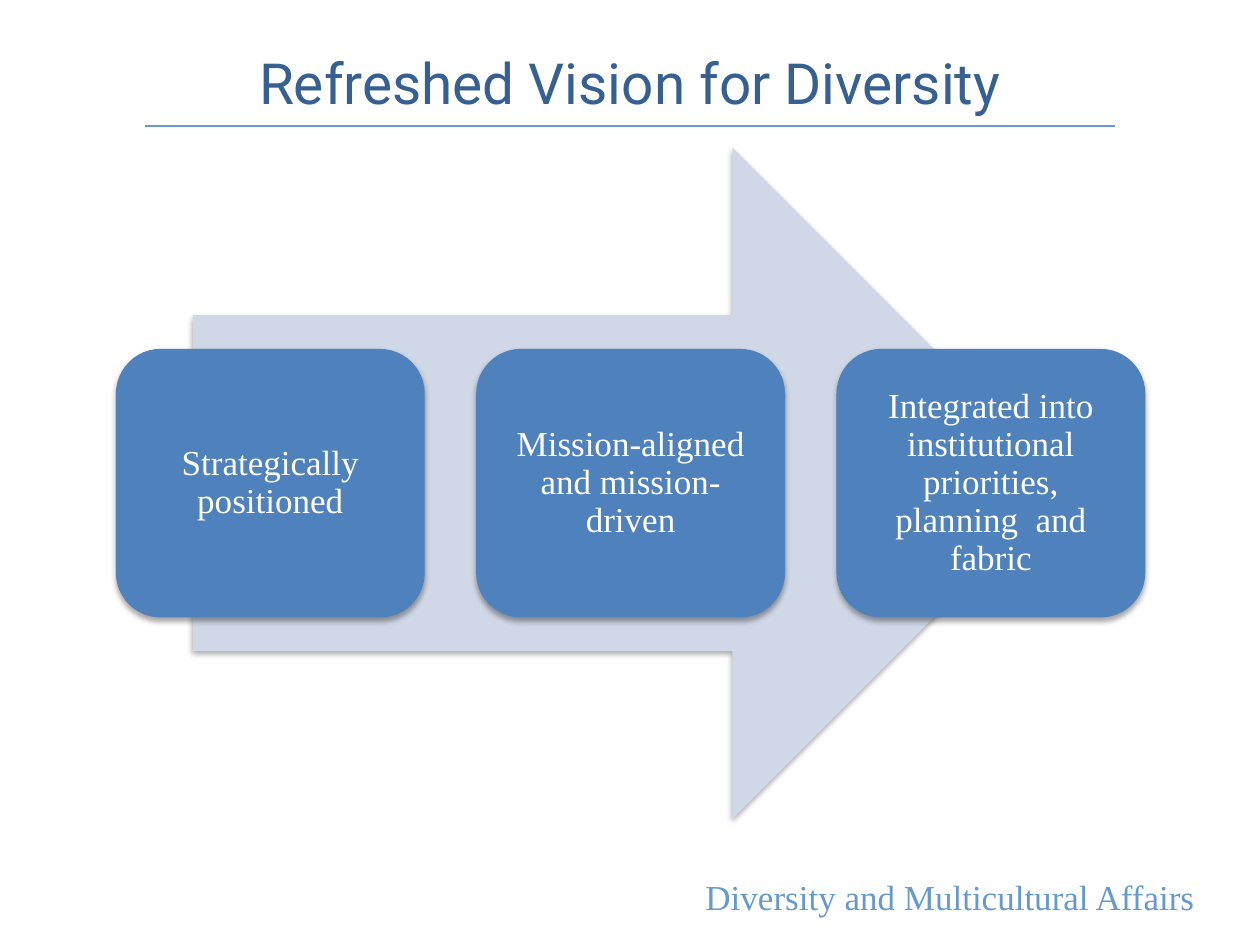
from lxml.etree import SubElement
from pptx import Presentation
from pptx.dml.color import RGBColor
from pptx.enum.shapes import MSO_CONNECTOR, MSO_SHAPE
from pptx.enum.text import MSO_ANCHOR, PP_ALIGN
from pptx.oxml.ns import qn
from pptx.util import Inches, Pt

TITLE_BLUE = RGBColor(0x37, 0x60, 0x92)
ACCENT_BLUE = RGBColor(0x66, 0x99, 0xCC)
ARROW_BLUE = RGBColor(0xD0, 0xD8, 0xE8)
CARD_BLUE = RGBColor(0x4F, 0x81, 0xBD)
WHITE = RGBColor(0xFF, 0xFF, 0xFF)
SERIF = "Times New Roman"
VISION_STEPS = [
    "Strategically positioned",
    "Mission-aligned and mission-driven",
    "Integrated into institutional priorities, planning  and fabric",
]


def write_text(shape, text, font_name, size, color, alignment):
    """Fill a shape with one styled, wrapped paragraph and return it."""
    frame = shape.text_frame
    frame.word_wrap = True
    paragraph = frame.paragraphs[0]
    paragraph.text = text
    paragraph.alignment = alignment
    paragraph.font.name = font_name
    paragraph.font.size = Pt(size)
    paragraph.font.color.rgb = color
    return paragraph


def add_soft_shape(slide, kind, left, top, width, height, color):
    """Add a borderless filled shape with a soft shadow below it."""
    shape = slide.shapes.add_shape(
        kind, Inches(left), Inches(top), Inches(width), Inches(height))
    shape.fill.solid()
    shape.fill.fore_color.rgb = color
    shape.line.fill.background()
    shape.shadow.inherit = False
    effects = shape._element.spPr.find(qn("a:effectLst"))
    shadow = SubElement(effects, qn("a:outerShdw"), blurRad=str(Pt(3.1)),
                        dist=str(Pt(1.8)), dir="5400000", rotWithShape="0")
    shadow_color = SubElement(shadow, qn("a:srgbClr"), val="000000")
    SubElement(shadow_color, qn("a:alpha"), val="35000")
    return shape


def add_title(slide, left, top, width, height):
    """Place the centred title with a thin rule along its lower edge."""
    title = slide.shapes.add_textbox(
        Inches(left), Inches(top), Inches(width), Inches(height))
    title.text_frame.vertical_anchor = MSO_ANCHOR.MIDDLE
    write_text(title, "Refreshed Vision for Diversity", "Roboto", 32.4,
               TITLE_BLUE, PP_ALIGN.CENTER)
    inset, bottom = 0.65, Inches(top + height)
    rule = slide.shapes.add_connector(
        MSO_CONNECTOR.STRAIGHT, Inches(left + inset), bottom,
        Inches(left + width - inset), bottom)
    rule.line.color.rgb = ACCENT_BLUE
    rule.line.width = Pt(0.75)
    SubElement(rule._element.spPr, qn("a:effectLst"))


def add_vision_process(slide, left, top, width, height):
    """Place a broad arrow behind a centred row of equally spaced cards."""
    arrow_width = width * 0.85
    add_soft_shape(slide, MSO_SHAPE.RIGHT_ARROW,
                   left + (width - arrow_width) / 2, top,
                   arrow_width, height, ARROW_BLUE)
    card_width, card_height = width * 0.3, height * 0.4
    step = (width - card_width) / (len(VISION_STEPS) - 1)
    card_top = top + (height - card_height) / 2
    for index, text in enumerate(VISION_STEPS):
        card = add_soft_shape(slide, MSO_SHAPE.ROUNDED_RECTANGLE,
                              left + index * step, card_top,
                              card_width, card_height, CARD_BLUE)
        frame = card.text_frame
        frame.vertical_anchor = MSO_ANCHOR.MIDDLE
        frame.margin_left = frame.margin_right = Inches(0.08)
        frame.margin_top = frame.margin_bottom = Inches(0.08)
        paragraph = write_text(card, text, SERIF, 20, WHITE, PP_ALIGN.CENTER)
        paragraph.line_spacing = 0.9


def add_footer(slide, left, top, width, height):
    """Place the right-aligned department name."""
    footer = slide.shapes.add_textbox(
        Inches(left), Inches(top), Inches(width), Inches(height))
    write_text(footer, "Diversity and Multicultural Affairs", SERIF, 20,
               ACCENT_BLUE, PP_ALIGN.RIGHT)


def main():
    """Build and save the slide."""
    presentation = Presentation()
    presentation.slide_width = Inches(10)
    presentation.slide_height = Inches(7.5)
    slide = presentation.slides.add_slide(presentation.slide_layouts[6])
    add_footer(slide, 5.5, 6.9, 4.08, 0.44)
    add_title(slide, 0.5, 0.3, 9, 0.7)
    add_vision_process(slide, 0.92, 1.17, 8.17, 5.33)
    presentation.save("out.pptx")


if __name__ == "__main__":
    main()
